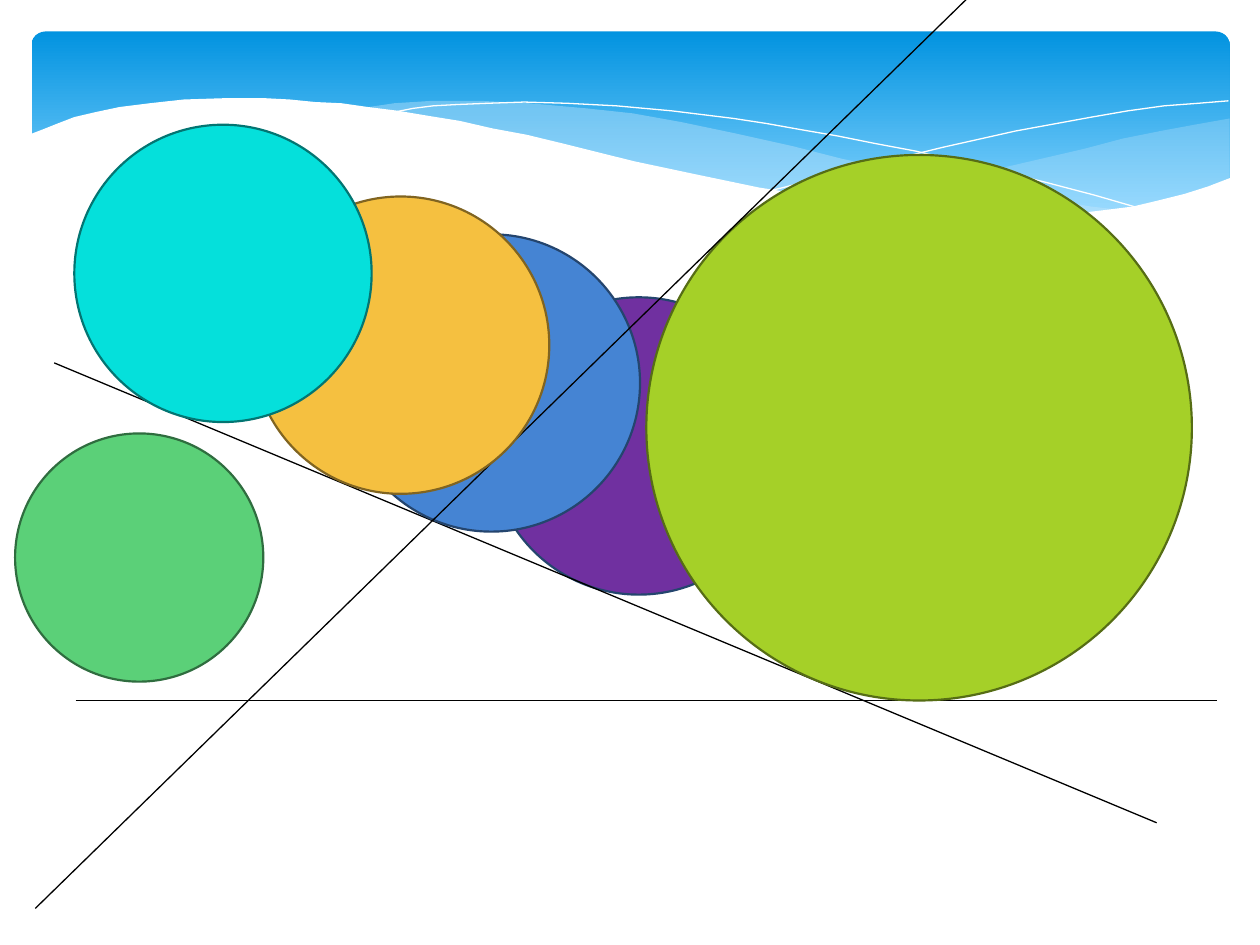
from lxml import etree
from pptx import Presentation
from pptx.dml.color import RGBColor
from pptx.enum.shapes import MSO_CONNECTOR, MSO_SHAPE
from pptx.oxml.ns import qn
from pptx.util import Inches, Pt

ROUNDED = MSO_SHAPE.ROUNDED_RECTANGLE
OVAL = MSO_SHAPE.OVAL
STRAIGHT = MSO_CONNECTOR.STRAIGHT

WHITE = RGBColor(0xFF, 0xFF, 0xFF)
BLACK = RGBColor(0x00, 0x00, 0x00)
BANNER_TOP = RGBColor(0x02, 0x93, 0xE0)
BANNER_BOTTOM = RGBColor(0x83, 0xD3, 0xFE)
PALE_BLUE = RGBColor(0xC6, 0xE7, 0xFC)
PURPLE = RGBColor(0x70, 0x30, 0xA0)
BLUE = RGBColor(0x45, 0x84, 0xD3)
NAVY = RGBColor(0x24, 0x45, 0x6E)
LIME = RGBColor(0xA5, 0xD0, 0x28)
OLIVE = RGBColor(0x56, 0x6D, 0x15)
AMBER = RGBColor(0xF5, 0xC0, 0x40)
BROWN = RGBColor(0x80, 0x64, 0x21)
CYAN = RGBColor(0x05, 0xE0, 0xDB)
TEAL = RGBColor(0x03, 0x75, 0x72)
GREEN = RGBColor(0x5B, 0xD0, 0x78)
DARK_GREEN = RGBColor(0x2F, 0x6D, 0x3F)

RIGHT_WAVE = [
    (9.76, 0.94), (9.48, 0.99), (9.21, 1.04), (8.91, 1.10), (8.61, 1.18),
    (8.05, 1.31), (7.53, 1.43), (7.06, 1.52), (6.61, 1.60), (6.91, 1.64),
    (7.32, 1.68), (7.69, 1.71), (8.03, 1.72), (8.35, 1.72), (8.63, 1.70),
    (8.89, 1.66), (9.13, 1.62), (9.35, 1.56), (9.63, 1.47), (9.76, 1.41),
]
MIDDLE_WAVE = [
    (8.93, 1.67), (8.66, 1.64), (8.07, 1.54), (7.41, 1.42), (6.68, 1.26),
    (6.29, 1.16), (5.84, 1.06), (5.41, 0.97), (5.02, 0.90), (4.65, 0.86),
    (4.20, 0.82), (3.80, 0.80), (3.44, 0.80), (3.13, 0.82), (2.86, 0.86),
    (3.23, 0.90), (3.62, 0.97), (4.04, 1.06), (4.49, 1.16), (4.91, 1.26),
    (5.30, 1.35), (5.66, 1.43), (6.01, 1.50), (6.34, 1.56), (6.65, 1.61),
    (6.95, 1.65), (7.36, 1.69), (7.73, 1.72), (8.07, 1.73), (8.38, 1.72),
    (8.67, 1.70),
]
LONG_CURVE = [
    (3.09, 0.90), (3.18, 0.88), (3.28, 0.86), (3.44, 0.84), (3.63, 0.83),
    (3.87, 0.82), (4.16, 0.81), (4.50, 0.82), (4.89, 0.84), (5.33, 0.88),
    (5.82, 0.94), (6.08, 0.98), (6.36, 1.03), (6.65, 1.08), (6.95, 1.14),
    (7.27, 1.20), (7.60, 1.28), (7.95, 1.36), (8.31, 1.45), (8.69, 1.55),
    (9.07, 1.66),
]
SHORT_CURVE = [
    (6.13, 1.51), (6.53, 1.41), (6.95, 1.30), (7.48, 1.17), (8.06, 1.04),
    (8.66, 0.93), (8.95, 0.88), (9.24, 0.84), (9.51, 0.82), (9.75, 0.80),
]
WHITE_WAVE = [
    (9.77, 1.41), (9.59, 1.48), (9.40, 1.54), (9.20, 1.59), (8.99, 1.64),
    (8.75, 1.67), (8.50, 1.70), (8.23, 1.71), (7.93, 1.71), (7.61, 1.70),
    (7.26, 1.67), (6.88, 1.62), (6.48, 1.56), (6.03, 1.49), (5.55, 1.39),
    (5.03, 1.28), (4.47, 1.14), (4.18, 1.07), (3.91, 1.02), (3.65, 0.96),
    (3.40, 0.92), (3.16, 0.88), (2.92, 0.85), (2.71, 0.82), (2.50, 0.81),
    (2.30, 0.79), (2.11, 0.78), (1.77, 0.78), (1.46, 0.79), (1.19, 0.82),
    (0.95, 0.85), (0.76, 0.89), (0.59, 0.93), (0.46, 0.98), (0.36, 1.02),
    (0.23, 1.07), (0.23, 2.24), (9.77, 2.24),
]


class SlideBuilder:
    """Draws styled elements on the current slide."""

    formats = {
        "circle": {"width": Pt(1.25)},
        "tangent": {"width": Pt(0.75)},
        "curve": {"width": Pt(0)},
    }

    def __init__(self, slide):
        self.slide = slide
        self.shapes = slide.shapes

    def style_line(self, line, name, color):
        line.fill.solid()
        line.color.rgb = color
        for attribute, value in self.formats[name].items():
            setattr(line, attribute, value)

    def banner(self, left, top, width, height):
        shape = self.shapes.add_shape(
            ROUNDED, Inches(left), Inches(top), Inches(width), Inches(height))
        shape.adjustments[0] = 0.071
        shape.shadow.inherit = False
        shape.line.fill.background()
        shape.fill.gradient()
        shape.fill.gradient_angle = 270
        colors = ((0, BANNER_TOP), (0.9, BANNER_BOTTOM))
        for stop, (position, color) in zip(shape.fill.gradient_stops, colors):
            stop.position = position
            stop.color.rgb = color

    def outline(self, points, closed):
        start, *others = [(Inches(x), Inches(y)) for x, y in points]
        builder = self.shapes.build_freeform(*start)
        builder.add_line_segments(others, close=closed)
        shape = builder.convert_to_shape()
        shape.shadow.inherit = False
        return shape

    def wave(self, points, color, opacity=100):
        shape = self.outline(points, True)
        shape.line.fill.background()
        shape.fill.solid()
        shape.fill.fore_color.rgb = color
        if opacity < 100:
            fill_color = shape.element.spPr.find(".//" + qn("a:srgbClr"))
            alpha = etree.SubElement(fill_color, qn("a:alpha"))
            alpha.set("val", str(opacity * 1000))

    def curve(self, points):
        shape = self.outline(points, False)
        shape.fill.background()
        self.style_line(shape.line, "curve", WHITE)

    def circle(self, left, top, diameter, fill, border):
        size = Inches(diameter)
        shape = self.shapes.add_shape(OVAL, Inches(left), Inches(top), size, size)
        shape.shadow.inherit = False
        shape.fill.solid()
        shape.fill.fore_color.rgb = fill
        self.style_line(shape.line, "circle", border)

    def tangent(self, *ends):
        connector = self.shapes.add_connector(STRAIGHT, *map(Inches, ends))
        self.style_line(connector.line, "tangent", BLACK)
        etree.SubElement(connector.element.spPr, qn("a:effectLst"))


def main():
    presentation = Presentation()
    presentation.slide_width = Inches(10)
    presentation.slide_height = Inches(7.5)
    blank_layout = presentation.slide_layouts[6]
    builder = SlideBuilder(presentation.slides.add_slide(blank_layout))

    builder.banner(0.25, 0.25, 9.51, 1.56)
    builder.wave(RIGHT_WAVE, PALE_BLUE, 29)
    builder.wave(MIDDLE_WAVE, PALE_BLUE, 40)
    builder.curve(LONG_CURVE)
    builder.curve(SHORT_CURVE)
    builder.wave(WHITE_WAVE, WHITE)

    builder.circle(3.89, 2.36, 2.36, PURPLE, NAVY)
    builder.tangent(0.43, 2.88, 9.18, 6.53)
    builder.tangent(0.6, 5.56, 9.66, 5.56)
    builder.circle(5.13, 1.23, 4.33, LIME, OLIVE)
    builder.circle(2.72, 1.86, 2.36, BLUE, NAVY)
    builder.tangent(0.28, 7.21, 7.91, -0.24)
    builder.circle(2, 1.56, 2.36, AMBER, BROWN)
    builder.circle(0.59, 0.99, 2.36, CYAN, TEAL)
    builder.circle(0.12, 3.44, 1.97, GREEN, DARK_GREEN)

    presentation.save("out.pptx")


if __name__ == "__main__":
    main()
